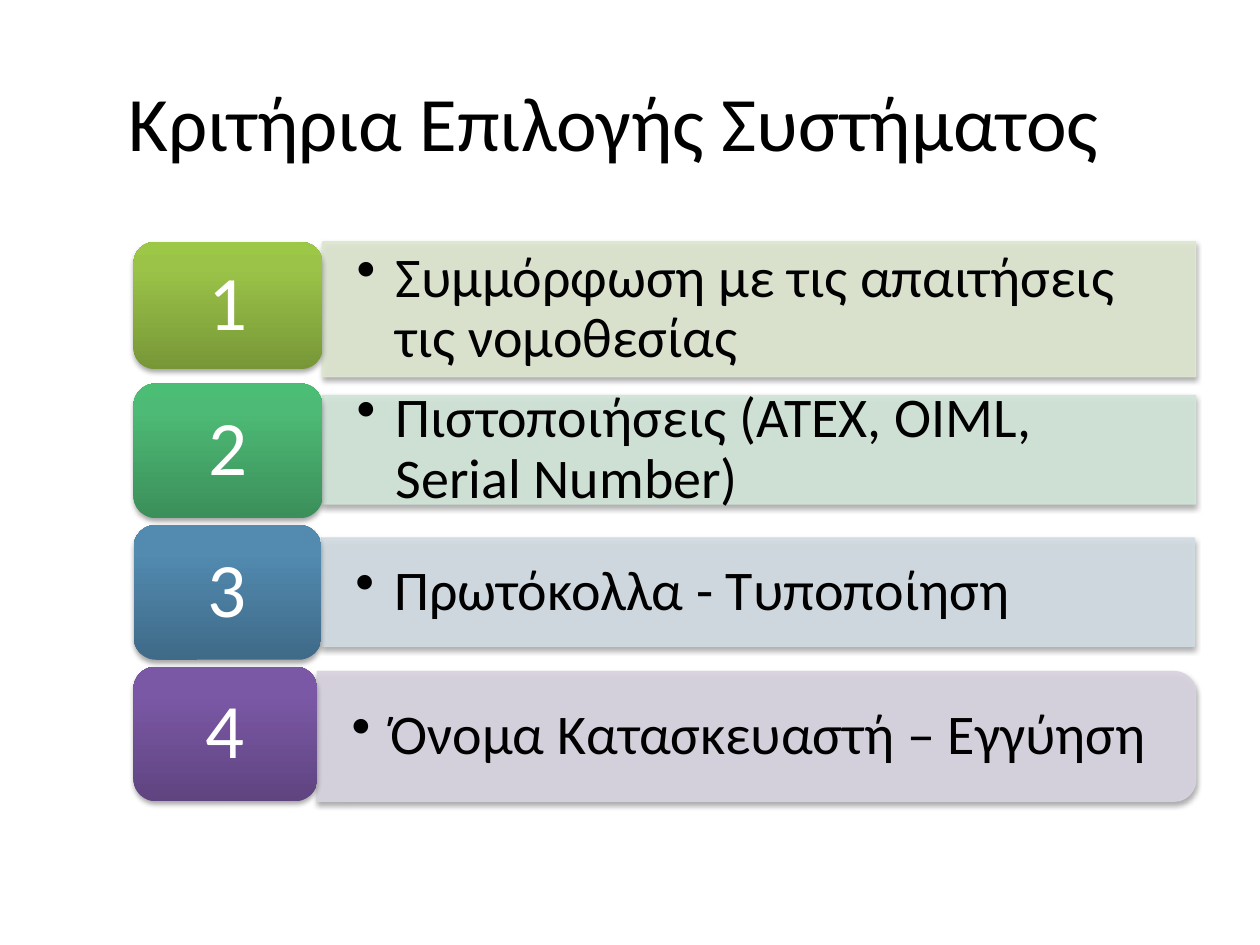
"""Build a slide listing four numbered system selection criteria."""
from dataclasses import dataclass

from lxml import etree
from pptx import Presentation
from pptx.dml.color import RGBColor
from pptx.enum.shapes import MSO_SHAPE
from pptx.enum.text import MSO_ANCHOR, PP_ALIGN
from pptx.oxml.ns import qn
from pptx.util import Inches, Pt

RECT, ROUND_TOP = MSO_SHAPE.RECTANGLE, MSO_SHAPE.ROUND_2_SAME_RECTANGLE
TILE = MSO_SHAPE.ROUNDED_RECTANGLE
MIDDLE, CENTER = MSO_ANCHOR.MIDDLE, PP_ALIGN.CENTER


@dataclass(frozen=True)
class Theme:
    font: str = "Calibri"
    text: str = "000000"
    number: str = "FFFFFF"
    shadow: str = "000000"
    large: int = 44
    body: int = 32
    bars: tuple = ("DEE7D1", "D2E5D9", "D2DCE2", "D8D3E0")
    tiles: tuple = (
        ("779737", "9BC348", "9DC746"),
        ("3B8F5A", "4DBA75", "4BBD75"),
        ("3F6A88", "528AB0", "518BB3"),
        ("5F4480", "7B58A6", "7C57A8"),
    )


theme = Theme()


def write(shape, text, size, color, margins):
    tf = shape.text_frame
    tf.text = text
    tf.word_wrap = True
    tf.vertical_anchor = MIDDLE
    tf.margin_left = tf.margin_right = Inches(margins[0])
    tf.margin_top = tf.margin_bottom = Inches(margins[1])
    p = tf.paragraphs[0]
    font = p.runs[0].font
    font.name, font.size = theme.font, Pt(size)
    font.color.rgb = RGBColor.from_string(color)
    return p


def add_shadow(shape):
    shape.shadow.inherit = False
    effects = shape._element.spPr.find(qn("a:effectLst"))
    outer = etree.SubElement(effects, qn("a:outerShdw"), blurRad=str(Pt(3.1)),
                             dist=str(Pt(1.8)), dir="5400000", rotWithShape="0")
    color = etree.SubElement(outer, qn("a:srgbClr"), val=theme.shadow)
    etree.SubElement(color, qn("a:alpha"), val="35000")


prs = Presentation()
prs.slide_width, prs.slide_height = Inches(10), Inches(7.5)
s = prs.slides.add_slide(prs.slide_layouts[6])

title = s.shapes.add_textbox(Inches(0.92), Inches(0.33), Inches(8.83), Inches(1.25))
write(title, "Κριτήρια Επιλογής Συστήματος", theme.large, theme.text, (0.1, 0.05))

tile_left, tile_top, tile_pitch = 1.06, 1.92, 3.37 / 3
rows = [
    ("Συμμόρφωση με τις απαιτήσεις τις νομοθεσίας", 1.5, 1.01, RECT, 1.92, 6.93, 1.07),
    ("Πιστοποιήσεις (ATEX, OIML, Serial Number)", 1.5, 1.07, RECT, 3.14, 6.93, 0.86),
    ("Πρωτόκολλα - Τυποποίηση", 1.49, 1.07, RECT, 4.27, 6.93, 0.86),
    ("Όνομα Κατασκευαστή – Εγγύηση", 1.46, 1.07, ROUND_TOP, 5.33, 6.97, 1.03),
]
for i, (text, tile_w, tile_h, bar_kind, bar_top, bar_w, bar_h) in enumerate(rows):
    bar_left = tile_left + tile_w
    turn = (bar_w - bar_h) / 2
    bar = s.shapes.add_shape(bar_kind, Inches(bar_left + turn), Inches(bar_top - turn),
                             Inches(bar_h), Inches(bar_w))
    bar.rotation = 90
    bar.line.width = Pt(0.75)
    bar.fill.solid()
    for fill in (bar.fill, bar.line.fill):
        fill.solid()
        fill.fore_color.rgb = RGBColor.from_string(theme.bars[i])
    for color in bar._element.spPr.iter(qn("a:srgbClr")):
        etree.SubElement(color, qn("a:alpha"), val="90000")
    add_shadow(bar)

    label = s.shapes.add_textbox(Inches(bar_left), Inches(bar_top), Inches(bar_w), Inches(bar_h))
    p = write(label, text, theme.body, theme.text, (0.27, 0.14))
    p.line_spacing = 0.9
    pPr = p._p.get_or_add_pPr()
    pPr.set("marL", str(Inches(0.31)))
    pPr.set("indent", str(Inches(-0.31)))
    etree.SubElement(pPr, qn("a:buChar"), char="•")

    tile = s.shapes.add_shape(TILE, Inches(tile_left), Inches(tile_top + i * tile_pitch),
                              Inches(tile_w), Inches(tile_h))
    tile.line.fill.background()
    tile.fill.gradient()
    tile.fill.gradient_angle = 90
    stops = tile._element.spPr.find(".//" + qn("a:gsLst"))
    stops.clear()
    for pos, color in zip((0, 80000, 100000), theme.tiles[i]):
        stop = etree.SubElement(stops, qn("a:gs"), pos=str(pos))
        etree.SubElement(stop, qn("a:srgbClr"), val=color)
    add_shadow(tile)
    p = write(tile, str(i + 1), theme.large, theme.number, (0.18, 0.09))
    p.alignment = CENTER
    p.line_spacing = 0.9

prs.save("out.pptx")
